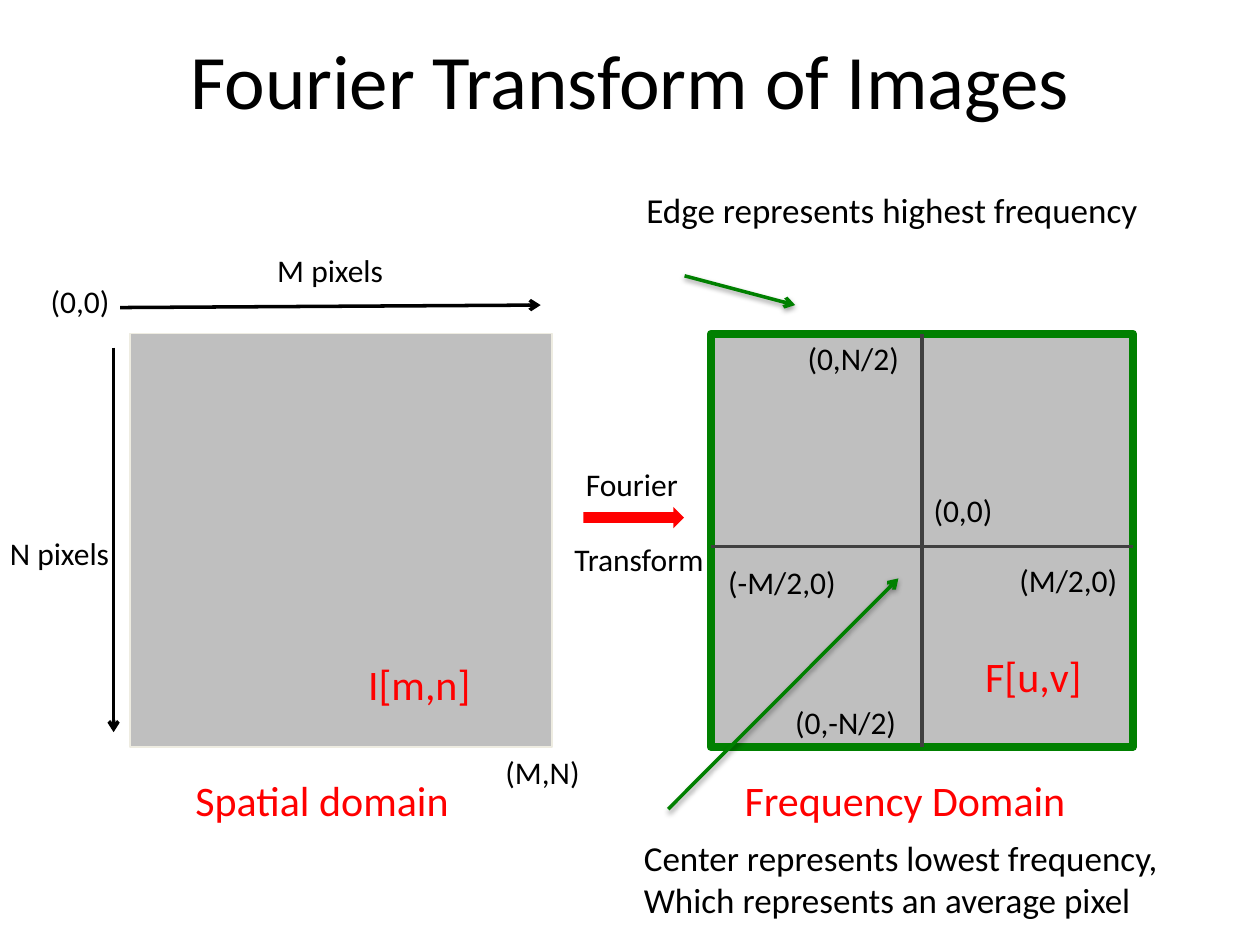
from lxml.etree import SubElement
from pptx import Presentation
from pptx.dml.color import RGBColor
from pptx.enum.shapes import MSO_CONNECTOR, MSO_SHAPE
from pptx.enum.text import MSO_ANCHOR, PP_ALIGN
from pptx.oxml.ns import qn
from pptx.util import Cm, Pt

COLORS = {"text": "000000", "accent": "FF0000", "square": "BFBFBF",
          "square_edge": "EEECE1", "frequency": "008000", "axis": "404040"}
SQUARE_WIDTH, SQUARE_HEIGHT = 8.51, 8.33


def color(name):
    return RGBColor.from_string(COLORS[name])


def add_text(slide, box, left, top, width, text, size=18, color_name="text"):
    """Place a text box whose height follows from its lines."""
    lines = text.split("\n")
    height = 0.25 + 0.0425 * size * len(lines)
    shape = slide.shapes.add_textbox(Cm(box[0] + left), Cm(box[1] + top),
                                     Cm(width), Cm(height))
    frame = shape.text_frame
    frame.word_wrap = True
    frame.text = text
    for paragraph in frame.paragraphs:
        paragraph.font.name = "Calibri"
        paragraph.font.size = Pt(size)
        paragraph.font.color.rgb = color(color_name)
    return shape


def add_block(slide, box, left, top, width, height, kind, fill, edge=None, edge_width=0):
    shape = slide.shapes.add_shape(kind, Cm(box[0] + left), Cm(box[1] + top),
                                   Cm(width), Cm(height))
    shape.shadow.inherit = False
    shape.fill.solid()
    shape.fill.fore_color.rgb = color(fill)
    if edge:
        shape.line.color.rgb = color(edge)
        shape.line.width = Pt(edge_width)
    else:
        shape.line.fill.background()


def add_line(slide, box, start, end, color_name, arrow=True, shadow=False):
    points = [Cm(origin + offset) for point in (start, end)
              for origin, offset in zip(box, point)]
    connector = slide.shapes.add_connector(MSO_CONNECTOR.STRAIGHT, *points)
    connector.line.color.rgb = color(color_name)
    connector.line.width = Pt(2)
    properties = connector._element.spPr
    if arrow:
        SubElement(properties.find(qn("a:ln")), qn("a:tailEnd"), type="arrow")
    effects = SubElement(properties, qn("a:effectLst"))
    if shadow:
        outer = SubElement(effects, qn("a:outerShdw"), blurRad=str(Pt(3.1)),
                           dist=str(Pt(1.6)), dir="5400000", rotWithShape="0")
        tint = SubElement(outer, qn("a:srgbClr"), val=COLORS["text"])
        SubElement(tint, qn("a:alpha"), val="38000")


def add_title(slide, box):
    shape = add_text(slide, box, 0, 0, 22.86, "Fourier Transform of Images", 44)
    shape.height = Cm(3.18)
    shape.text_frame.vertical_anchor = MSO_ANCHOR.MIDDLE
    shape.text_frame.paragraphs[0].alignment = PP_ALIGN.CENTER


def add_spatial_domain(slide, box):
    add_block(slide, box, 0, 0, SQUARE_WIDTH, SQUARE_HEIGHT, MSO_SHAPE.RECTANGLE,
              "square", "square_edge", 0.75)
    add_line(slide, box, (-0.2, -0.53), (8.28, -0.58), "text")
    add_line(slide, box, (-0.33, 0.28), (-0.33, 8.03), "text")
    for left, top, width, text in [
        (-1.85, -1.17, 2.41, "(0,0)"),
        (2.72, -1.8, 3.1, "M pixels"),
        (-2.67, 3.91, 4.45, "N pixels"),
        (7.32, 8.33, 2.84, "(M,N)"),
    ]:
        add_text(slide, box, left, top, width, text)
    add_text(slide, box, 4.55, 6.43, 4.6, "I[m,n]", 24, "accent")
    add_text(slide, box, 1.07, 8.76, 7.16, "Spatial domain", 24, "accent")


def add_transform(slide, box):
    add_text(slide, box, 0.23, 0, 2.57, "Fourier")
    add_block(slide, box, 0.43, 0.97, 2.03, 0.43, MSO_SHAPE.RIGHT_ARROW, "accent")
    add_text(slide, box, 0, 1.52, 3.48, "Transform")


def add_frequency_domain(slide, box):
    add_block(slide, box, 0, 0, SQUARE_WIDTH, SQUARE_HEIGHT, MSO_SHAPE.RECTANGLE,
              "square", "frequency", 4.5)
    middle, axis_height = SQUARE_WIDTH / 2, 4.29
    add_line(slide, box, (0, axis_height), (SQUARE_WIDTH, axis_height), "axis", arrow=False)
    add_line(slide, box, (middle, 0), (middle, SQUARE_HEIGHT), "axis", arrow=False)
    for left, top, width, text in [
        (4.24, 3.05, 2.29, "(0,0)"),
        (1.7, -0.03, 2.79, "(0,N/2)"),
        (1.45, 7.32, 2.79, "(0,-N/2)"),
        (0.1, 4.5, 3.2, "(-M/2,0)"),
        (5.97, 4.45, 3.2, "(M/2,0)"),
    ]:
        add_text(slide, box, left, top, width, text)
    add_text(slide, box, 5.28, 6.25, 4.6, "F[u,v]", 24, "accent")
    add_text(slide, box, 0.43, 8.76, 7.16, "Frequency Domain", 24, "accent")


def add_frequency_notes(slide, box):
    """Explain the edge and the center of the frequency square at box."""
    add_line(slide, box, (-0.53, -1.17), (1.7, -0.58), "frequency", shadow=True)
    add_text(slide, box, -1.55, -3.05, 10.74, "Edge represents highest frequency", 20)
    add_line(slide, box, (-0.86, 9.58), (3.78, 4.93), "frequency", shadow=True)
    add_text(slide, box, -1.6, 10.01, 12.62,
             "Center represents lowest frequency,\nWhich represents an average pixel", 20)


def main():
    presentation = Presentation()
    presentation.slide_width, presentation.slide_height = Cm(25.4), Cm(19.05)
    slide = presentation.slides.add_slide(presentation.slide_layouts[6])
    frequency_box = (14.33, 6.73)
    add_title(slide, (1.27, 0))
    add_spatial_domain(slide, (2.62, 6.73))
    add_transform(slide, (11.33, 9.25))
    add_frequency_domain(slide, frequency_box)
    add_frequency_notes(slide, frequency_box)
    presentation.save("out.pptx")


if __name__ == "__main__":
    main()
